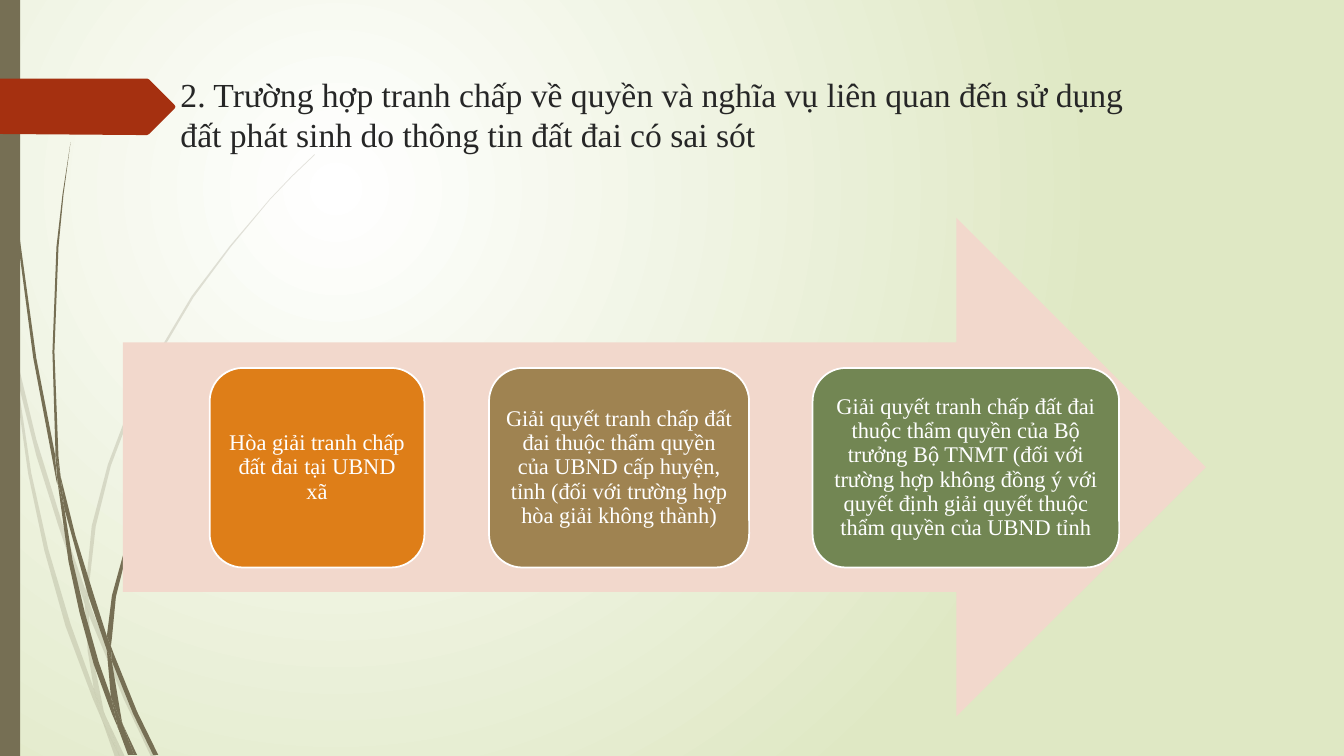
from lxml.etree import SubElement
from pptx import Presentation
from pptx.dml.color import RGBColor
from pptx.enum.shapes import MSO_SHAPE
from pptx.enum.text import MSO_ANCHOR, MSO_AUTO_SIZE, PP_ALIGN
from pptx.oxml.ns import qn
from pptx.util import Inches, Pt

COLORS = {
    "white": "FFFFFF", "mist": "DFE8C4", "grass": "766F54", "tag": "A53010",
    "title": "262626", "arrow": "F2D8CC",
    "orange": "DE7E18", "brown": "9F8351", "green": "728653",
}

# Outlines of the grass blades, as points in inches
FAINT_GRASS = [
    [(0.11, 3.5), (0.09, 3.22), (0, 2.82), (0, 2.99), (0.1, 3.44)],
    [(0.58, 5.22), (0.84, 5.99), (0.85, 5.86), (0.62, 5.2), (0.36, 4.36),
     (0.14, 3.45), (0.17, 3.76), (0.36, 4.52)],
    [(0.92, 6.07), (0.88, 5.96), (0.88, 6.1), (1.23, 6.94), (1.5, 7.51),
     (1.55, 7.51), (1.27, 6.92)],
    [(1.19, 7.51), (1.24, 7.51), (1.05, 7.11)],
    [(0.93, 6.83), (0.7, 6.19), (0.48, 5.45), (0.31, 4.69), (0.17, 3.76),
     (0.11, 3.5), (0.28, 4.7), (0.44, 5.46), (0.65, 6.21), (0.92, 6.93),
     (1.01, 7.14), (0.99, 7.07)],
    [(0.84, 5.99), (0.87, 6.46), (0.93, 6.83), (0.96, 6.92), (1.05, 7.11),
     (1.03, 7.06), (0.91, 6.46), (0.88, 6.1), (0.88, 6.08)],
    [(0.88, 5.84), (0.95, 5.22), (1.1, 4.62), (1.32, 4.04), (1.6, 3.49),
     (1.92, 2.95), (2.29, 2.45), (2.68, 1.98), (2.9, 1.75), (3.12, 1.54),
     (3.12, 1.53), (2.89, 1.75), (2.68, 1.97), (2.28, 2.44), (1.9, 2.94),
     (1.58, 3.48), (1.29, 4.03), (1.07, 4.61), (0.91, 5.22), (0.85, 5.84),
     (0.85, 5.86), (0.88, 5.96)],
    [(1.01, 7.14), (1.14, 7.51), (1.19, 7.51)],
    [(0.88, 6.08), (0.88, 6.1), (0.88, 5.96), (0.85, 5.86), (0.84, 5.99)],
    [(0.96, 6.92), (0.93, 6.83), (0.99, 7.07), (1.01, 7.14), (1.19, 7.51),
     (1.05, 7.11)],
]
SOLID_GRASS = [
    [(0.07, 1.1), (0.17, 2.33), (0.33, 3.55), (0.56, 4.77), (0.57, 4.81),
     (0.55, 4.57), (0.55, 4.53), (0.36, 3.55), (0.19, 2.32), (0.08, 1.09),
     (0.05, 0.48), (0.04, 0), (0.03, 0), (0.04, 0.48)],
    [(0.88, 5.92), (1.06, 6.45), (1.06, 6.33), (1.06, 6.31), (0.93, 5.9),
     (0.75, 5.32), (0.6, 4.72), (0.64, 5.05)],
    [(1.13, 6.49), (1.1, 6.41), (1.11, 6.56), (1.32, 7.08), (1.52, 7.49),
     (1.57, 7.49), (1.36, 7.06)],
    [(1.1, 6.91), (0.98, 6.57), (0.84, 6.07), (0.72, 5.56), (0.64, 5.05),
     (0.57, 4.77), (0.68, 5.57), (0.79, 6.08), (0.93, 6.59), (1.11, 7.08),
     (1.17, 7.22), (1.16, 7.17)],
    [(0.6, 4.72), (0.58, 4.53), (0.54, 3.49), (0.58, 2.45), (0.63, 1.93),
     (0.7, 1.41), (0.62, 1.93), (0.56, 2.45), (0.52, 3.49), (0.55, 4.49)],
    [(1.33, 7.49), (1.36, 7.49), (1.22, 7.19)],
    [(0.57, 4.77), (0.64, 5.05), (0.6, 4.72), (0.55, 4.49), (0.55, 4.53)],
    [(1.11, 6.33), (1.15, 5.92), (1.25, 5.52), (1.4, 5.13), (1.58, 4.76),
     (2.05, 4.06), (2.31, 3.74), (2.45, 3.59), (2.61, 3.44), (2.45, 3.58),
     (2.31, 3.73), (2.04, 4.05), (1.56, 4.74), (1.37, 5.12), (1.22, 5.51),
     (1.11, 5.91), (1.06, 6.31), (1.1, 6.41)],
    [(1.17, 7.22), (1.27, 7.49), (1.31, 7.49)],
    [(1.06, 6.45), (1.1, 6.91), (1.16, 7.06), (1.22, 7.19), (1.21, 7.16),
     (1.11, 6.56), (1.09, 6.51)],
    [(1.06, 6.45), (1.09, 6.51), (1.11, 6.56), (1.1, 6.41), (1.06, 6.31),
     (1.06, 6.33)],
    [(1.16, 7.06), (1.1, 6.91), (1.16, 7.17), (1.17, 7.22), (1.3, 7.49),
     (1.33, 7.49), (1.22, 7.19)],
]
TAG = [(0, 0.78), (1.46, 0.78), (1.48, 0.79), (1.73, 1.04), (1.74, 1.06),
       (1.73, 1.08), (1.48, 1.33), (1.46, 1.34), (1.36, 1.34), (0, 1.33)]

TITLE = ("2. Trường hợp tranh chấp về quyền và nghĩa vụ liên quan đến sử dụng "
         "đất phát sinh do thông tin đất đai có sai sót")
# Left, width, colour and wording of each step
STEPS = [
    (2.08, 2.13, "orange", "Hòa giải tranh chấp đất đai tại UBND xã"),
    (4.85, 2.58, "brown",
     "Giải quyết tranh chấp đất đai thuộc thẩm quyền của UBND cấp huyện, tỉnh "
     "(đối với trường hợp hòa giải không thành)"),
    (8.06, 3.04, "green",
     "Giải quyết tranh chấp đất đai thuộc thẩm quyền của Bộ trưởng Bộ TNMT "
     "(đối với trường hợp không đồng ý với quyết định giải quyết thuộc thẩm "
     "quyền của UBND tỉnh"),
]


def rgb(name):
    return RGBColor.from_string(COLORS[name])


def write_text(frame, text, *, size, color, font, align=PP_ALIGN.LEFT,
               anchor=MSO_ANCHOR.TOP, spacing=1.0):
    frame.word_wrap = True
    frame.auto_size = MSO_AUTO_SIZE.NONE
    frame.vertical_anchor = anchor
    para = frame.paragraphs[0]
    para.alignment = align
    para.line_spacing = spacing
    span = para.add_run()
    span.text = text
    span.font.size = Pt(size)
    span.font.name = font
    span.font.color.rgb = rgb(color)


class SlideBuilder:
    font = "Times New Roman"

    def __init__(self, page):
        self.page = page

    def background(self, center, edge):
        fill = self.page.background.fill
        fill.gradient()
        for stop, color, position in zip(fill.gradient_stops, (center, edge), (0, 1)):
            stop.color.rgb = rgb(color)
            stop.position = position
        gradient = self.page._element.find(".//" + qn("a:gradFill"))
        gradient.remove(gradient.find(qn("a:lin")))
        circle = SubElement(gradient, qn("a:path"))
        circle.set("path", "circle")
        target = SubElement(circle, qn("a:fillToRect"))
        for side, share in zip("ltrb", (50, 50, 100, 100)):
            target.set(side, str(share * 1000))

    def paint(self, shape, color, line=None, alpha=None):
        shape.shadow.inherit = False
        shape.fill.solid()
        shape.fill.fore_color.rgb = rgb(color)
        if alpha is not None:
            tone = shape._element.spPr.find(".//" + qn("a:srgbClr"))
            SubElement(tone, qn("a:alpha")).set("val", str(alpha * 1000))
        if line:
            shape.line.color.rgb = rgb(line)
            shape.line.width = Pt(1.25)
        else:
            shape.line.fill.background()

    def outline(self, points, color, alpha=None, shapes=None):
        corners = [(Inches(x), Inches(y)) for x, y in points]
        builder = (shapes or self.page.shapes).build_freeform(*corners[0])
        builder.add_line_segments(corners[1:], close=True)
        self.paint(builder.convert_to_shape(), color, alpha=alpha)

    def grass(self, blades, alpha=None):
        group = self.page.shapes.add_group_shape()
        for blade in blades:
            self.outline(blade, "grass", alpha, group.shapes)

    def shape(self, kind, area, color, line=None):
        shape = self.page.shapes.add_shape(kind, *map(Inches, area))
        self.paint(shape, color, line)
        return shape

    def title(self, text, area):
        box = self.page.shapes.title
        box.left, box.top, box.width, box.height = map(Inches, area)
        write_text(box.text_frame, text, size=24, color="title", font=self.font)
        self.page.shapes._spTree.append(box._element)  # bring to front

    def step(self, left, width, color, text):
        box = self.shape(MSO_SHAPE.ROUNDED_RECTANGLE, (left, 3.65, width, 1.98),
                         color, line="white")
        frame = box.text_frame
        frame.margin_left = frame.margin_right = Inches(0.07)
        frame.margin_top = frame.margin_bottom = Inches(0.07)
        write_text(frame, text, size=16, color="white", font=self.font,
                   align=PP_ALIGN.CENTER, anchor=MSO_ANCHOR.MIDDLE, spacing=0.9)


def main():
    deck = Presentation()
    deck.slide_width, deck.slide_height = Inches(13.33), Inches(7.5)
    slide = SlideBuilder(deck.slides.add_slide(deck.slide_layouts[5]))

    # Backdrop
    slide.background("white", "mist")
    slide.grass(FAINT_GRASS, alpha=20)
    slide.grass(SOLID_GRASS)
    slide.shape(MSO_SHAPE.RECTANGLE, (0, 0, 0.2, 7.5), "grass")
    slide.outline(TAG, "tag")

    # Title and process
    slide.title(TITLE, (1.69, 0.68, 9.59, 1.4))
    slide.shape(MSO_SHAPE.RIGHT_ARROW, (1.22, 2.16, 10.74, 4.95), "arrow")
    for step in STEPS:
        slide.step(*step)

    deck.save("out.pptx")


if __name__ == "__main__":
    main()
